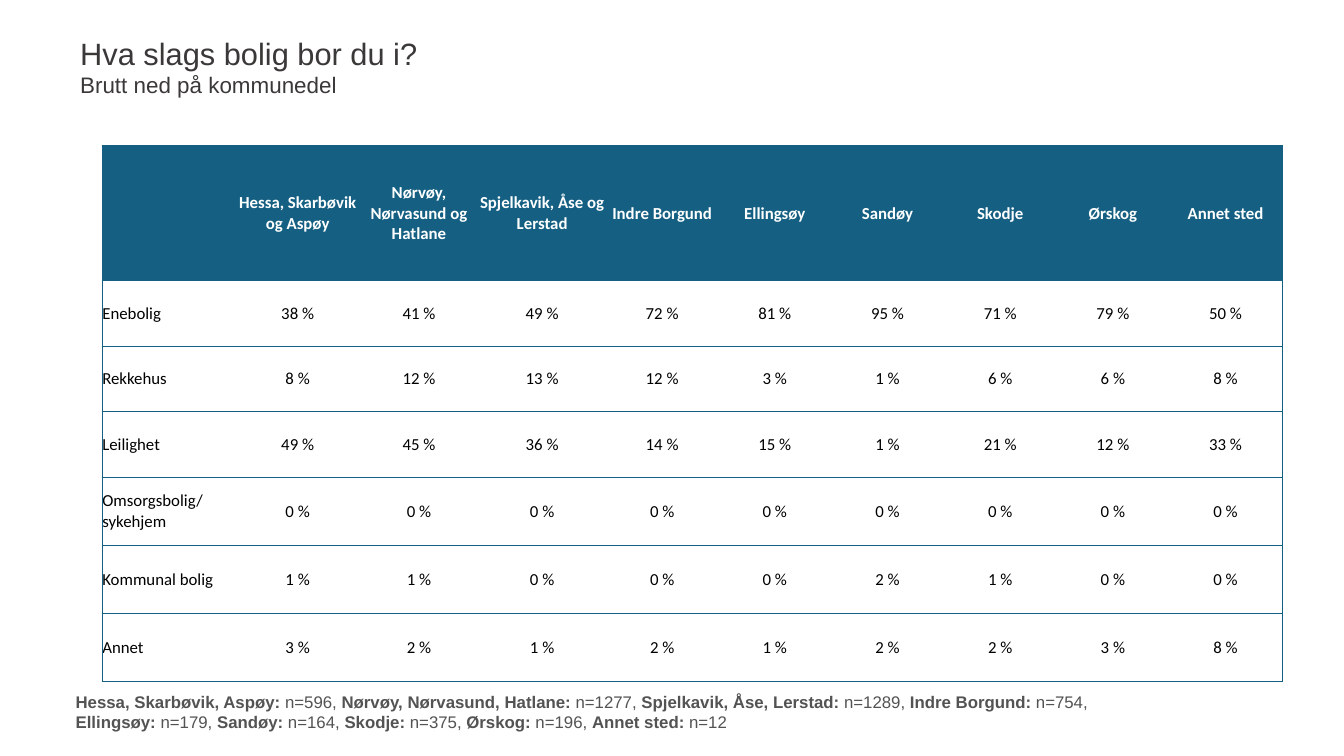
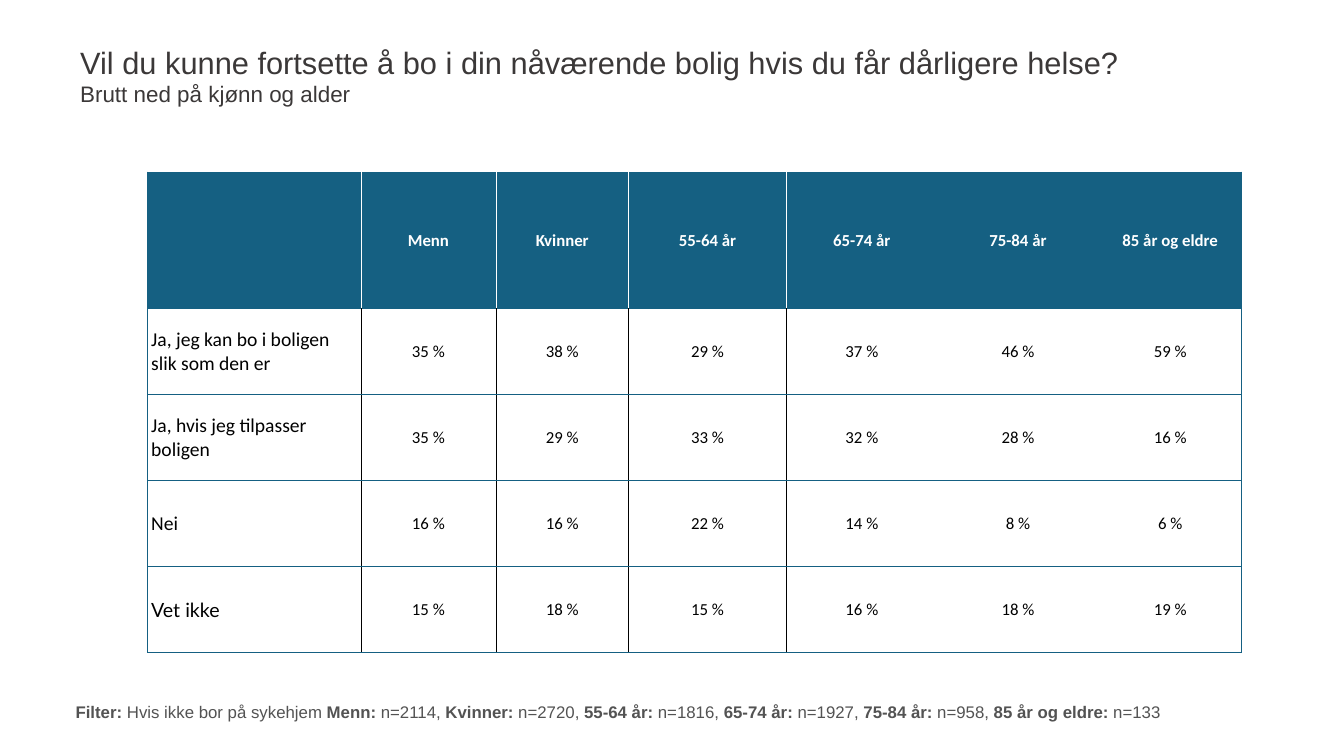
import pptx
import pptx.dml.color
import pptx.enum.text
import pptx.oxml.ns
import pptx.util
from lxml import etree

Pt = pptx.util.Pt
ALIGN = pptx.enum.text.PP_ALIGN
MIDDLE = pptx.enum.text.MSO_ANCHOR.MIDDLE
FIXED = pptx.enum.text.MSO_AUTO_SIZE.NONE
BLUE, WHITE, BLACK = "156082", "FFFFFF", "000000"
PLAIN = "{2D5ABB26-0587-4C30-8999-92F81FD0307C}"
SIDES = ("left", "right", "top", "bottom")
HEAD = {"name": "Arial", "size": Pt(44), "color": "3B3838"}
SUB = {**HEAD, "size": Pt(32)}
NOTE = {"name": "Arial", "size": Pt(24), "color": "535353"}
TOP = {"name": "Calibri", "size": Pt(24), "bold": True, "color": WHITE}
VALUE = {**TOP, "bold": False, "color": BLACK}
LABEL = {**VALUE, "size": Pt(28)}

HOMES = {
    "title": ("Hva slags bolig bor du i?", "Brutt ned på kommunedel"),
    "title box": (110, 34, 1703.5, 121),
    "place": (145.5, 208),
    "cols": [191.5, 176.5, 170, 182] + [161] * 6,
    "rows": [193] + [93.6] * 3 + [97.2] * 3,
    "heads": ["Hessa, Skarbøvik og Aspøy", "Nørvøy, Nørvasund og Hatlane",
              "Spjelkavik, Åse og Lerstad", "Indre Borgund", "Ellingsøy",
              "Sandøy", "Skodje", "Ørskog", "Annet sted"],
    "body": [
        ("Enebolig", VALUE, [38, 41, 49, 72, 81, 95, 71, 79, 50]),
        ("Rekkehus", VALUE, [8, 12, 13, 12, 3, 1, 6, 6, 8]),
        ("Leilighet", VALUE, [49, 45, 36, 14, 15, 1, 21, 12, 33]),
        ("Omsorgsbolig/\nsykehjem", VALUE, [0] * 9),
        ("Kommunal bolig", VALUE, [1, 1, 0, 0, 0, 2, 1, 0, 0]),
        ("Annet", VALUE, [3, 2, 1, 2, 1, 2, 2, 3, 8]),
    ],
    "inset": (0.7, 0.7, 0.7, 0),
    "splits": (),
    "note": [
        [("Hessa, Skarbøvik, Aspøy:", " n=596, "),
         ("Nørvøy, Nørvasund, Hatlane:", " n=1277, "),
         ("Spjelkavik, Åse, Lerstad:", " n=1289, "),
         ("Indre Borgund:", " n=754,")],
        [("Ellingsøy:", " n=179, "), ("Sandøy:", " n=164, "),
         ("Skodje:", " n=375, "), ("Ørskog:", " n=196, "),
         ("Annet sted:", " n=12")],
    ],
}
HEALTH = {
    "title": ("Vil du kunne fortsette å bo i din nåværende bolig "
              "hvis du får dårligere helse?", "Brutt ned på kjønn og alder"),
    "title box": (110, 34, 1703.5, 147),
    "place": (211, 245.5),
    "cols": [304.5, 193, 189.5, 225.5, 215.5, 230.5, 204.5],
    "rows": [195] + [123] * 4,
    "heads": ["Menn", "Kvinner", "55-64 år", "65-74 år", "75-84 år",
              "85 år og eldre"],
    "body": [
        ("Ja, jeg kan bo i boligen slik som den er", LABEL,
         [35, 38, 29, 37, 46, 59]),
        ("Ja, hvis jeg tilpasser boligen", LABEL, [35, 29, 33, 32, 28, 16]),
        ("Nei", LABEL, [16, 16, 22, 14, 8, 6]),
        ("Vet ikke", {**LABEL, "name": "Lato"}, [15, 18, 15, 16, 18, 19]),
    ],
    "inset": (5, 5, 0, 0),
    "splits": (0, 2),
    "note": [
        [("Filter: ", "Hvis ikke bor på sykehjem "), ("Menn: ", "n=2114, "),
         ("Kvinner:", " n=2720, "), ("55-64 år:", " n=1816, "),
         ("65-74 år:", " n=1927, "), ("75-84 år:", " n=958, "),
         ("85 år og eldre:", " n=133")],
    ],
}


def tint(color, code):
    """Set a colour format from a hex string."""
    color.rgb = pptx.dml.color.RGBColor.from_string(code)


def style(font, look):
    """Apply a dict of format values to a font."""
    for key, value in look.items():
        if key == "color":
            tint(font.color, value)
        else:
            setattr(font, key, value)


def write(para, text, look):
    """Add one formatted run to a paragraph."""
    run = para.add_run()
    run.text = text
    style(run.font, look)


def inset(item, sizes):
    """Set the left, right, top and bottom margins in points."""
    for side, size in zip(SIDES, sizes):
        setattr(item, f"margin_{side}", Pt(size))


def frame(shape):
    """Give a text shape the margins, wrap and anchor all slides share."""
    text = shape.text_frame
    text.word_wrap = True
    text.auto_size = FIXED
    text.vertical_anchor = MIDDLE
    inset(text, (4.5,) * 4)
    return text


def edge(cell, lines):
    """Draw the given cell borders, keyed L, R, T and B."""
    qn = pptx.oxml.ns.qn
    props = cell._tc.get_or_add_tcPr()
    for side in "LRTB":
        if side in lines:
            line = etree.SubElement(props, qn(f"a:ln{side}"), w=str(Pt(1)))
            fill = etree.SubElement(line, qn("a:solidFill"))
            etree.SubElement(fill, qn("a:srgbClr"), val=lines[side])


def fill_cell(cell, text, look, align, sizes, back):
    """Write and format one table cell."""
    cell.vertical_anchor = MIDDLE
    inset(cell, sizes)
    cell.text = text
    for para in cell.text_frame.paragraphs:
        para.alignment = align
        style(para.font, look)
        for run in para.runs:
            style(run.font, look)
    if back:
        cell.fill.solid()
        tint(cell.fill.fore_color, back)
    else:
        cell.fill.background()


def add_title(slide, box, lines):
    """Place the title and its smaller second line in the box."""
    shape = slide.shapes.title
    shape.left, shape.top, shape.width, shape.height = map(Pt, box)
    para = frame(shape).paragraphs[0]
    para.alignment = ALIGN.LEFT
    write(para, lines[0], HEAD)
    para.add_line_break()
    write(para, lines[1], SUB)


def add_grid(slide, data):
    """Place the table of answers by group."""
    cols, rows, splits = data["cols"], data["rows"], data["splits"]
    box = (*data["place"], sum(cols), sum(rows))
    table = slide.shapes.add_table(len(rows), len(cols), *map(Pt, box)).table
    table.horz_banding = False
    table._tbl.tblPr.find(pptx.oxml.ns.qn("a:tableStyleId")).text = PLAIN
    for col, width in zip(table.columns, cols):
        col.width = Pt(width)
    for row, height in zip(table.rows, rows):
        row.height = Pt(height)
    lines = [("", TOP, data["heads"])] + data["body"]
    for r, (label, look, values) in enumerate(lines):
        rule = BLACK if r else WHITE
        for c, value in enumerate([label, *values]):
            cell = table.cell(r, c)
            sides = {"T": BLUE, "B": BLUE}
            if c == 0:
                sides["L"] = BLUE
            elif c - 1 in splits:
                sides["L"] = rule
            if c == len(cols) - 1:
                sides["R"] = BLUE
            elif c in splits:
                sides["R"] = rule
            edge(cell, sides)
            if r and c == 0:
                fill_cell(cell, label, look, ALIGN.LEFT, data["inset"], WHITE)
            else:
                text = f"{value} %" if r else value
                fill_cell(cell, text, VALUE if r else TOP, ALIGN.CENTER,
                          (0.7, 0.7, 0.7, 0), None if r else BLUE)


def add_note(slide, box, lines):
    """Place the sample sizes, bold names before plain counts."""
    text = frame(slide.shapes.add_textbox(*map(Pt, box)))
    for i, pairs in enumerate(lines):
        para = text.add_paragraph() if i else text.paragraphs[0]
        for name, count in pairs:
            write(para, name, {**NOTE, "bold": True})
            write(para, count, {**NOTE, "bold": False})


def add_page(deck, data):
    """Build one slide with title, table and note."""
    slide = deck.slides.add_slide(deck.slide_layouts[5])
    add_title(slide, data["title box"], data["title"])
    add_grid(slide, data)
    add_note(slide, (103.5, 983, 1703.5, 67), data["note"])


def main():
    """Build and save the deck."""
    deck = pptx.Presentation()
    deck.slide_width, deck.slide_height = Pt(1920), Pt(1080)
    for data in (HOMES, HEALTH):
        add_page(deck, data)
    deck.save("out.pptx")


if __name__ == "__main__":
    main()
